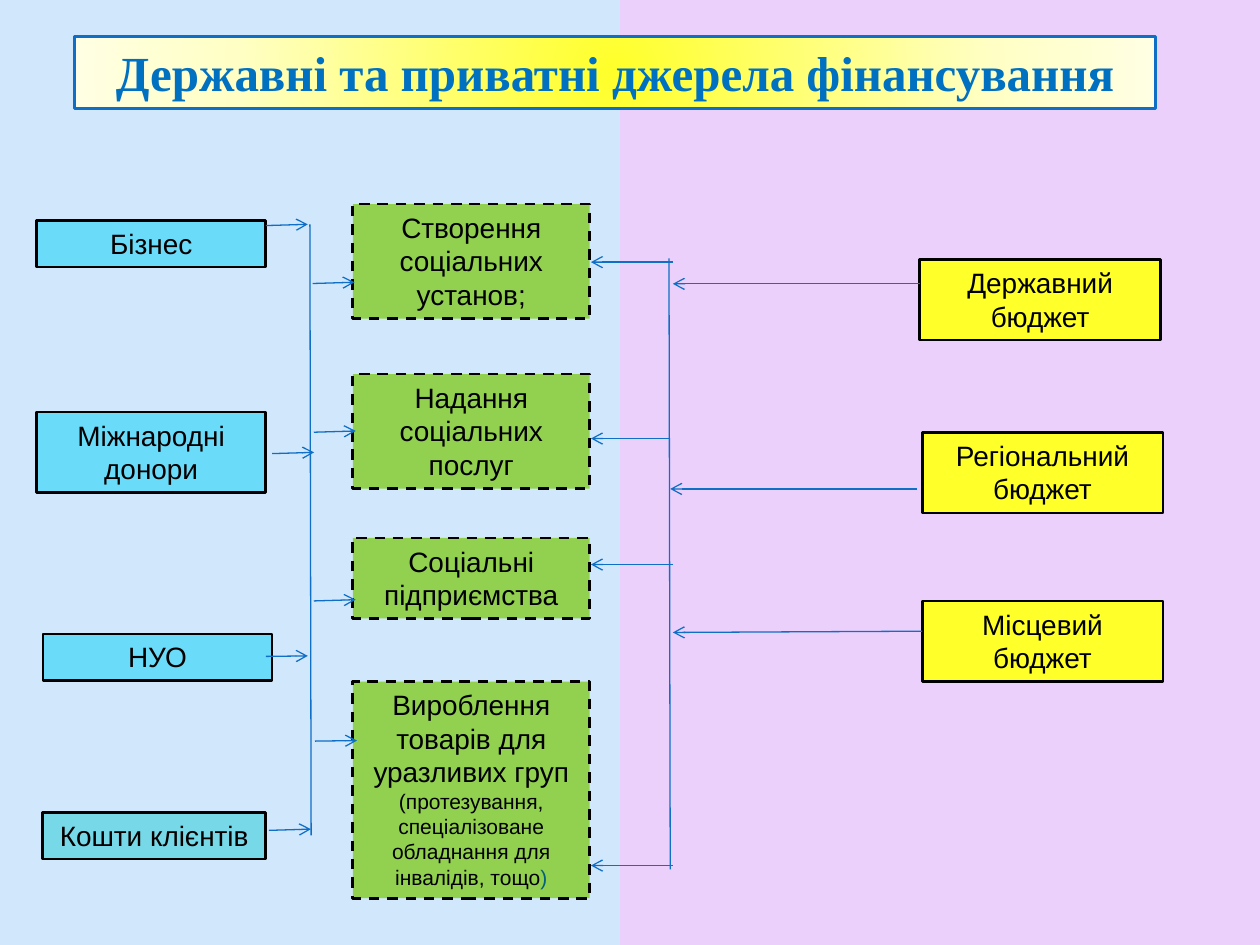
from lxml import etree
from pptx import Presentation
from pptx import util as u
from pptx.dml.color import RGBColor
from pptx.enum import dml, shapes, text
from pptx.oxml import ns, parse_xml

Pt = u.Pt
BLACK = RGBColor(0x00, 0x00, 0x00)
BLUE = RGBColor(0x0F, 0x6F, 0xC6)
TITLE = RGBColor(0x00, 0x70, 0xC0)
TEAL = RGBColor(0x04, 0x61, 0x7B)
LILAC = RGBColor(0xEB, 0xD0, 0xFC)
SKY = RGBColor(0xD1, 0xE7, 0xFB)
GREEN = RGBColor(0x92, 0xD0, 0x50)
YELLOW = RGBColor(0xFF, 0xFF, 0x29)
CYAN = RGBColor(0x6B, 0xDB, 0xFA)
AQUA = RGBColor(0x77, 0xD9, 0xE8)
GLOW = [(0, YELLOW), (70, RGBColor(0xFF, 0xFF, 0xC5)), (100, RGBColor(0xFF, 0xFF, 0xE3))]


class Diagram:
    """Holds the style and the current slide."""
    font, size = "Arial", 16
    border, thin = 1.5, 0.75

    def __init__(self, slide):
        self.s = slide

    def panel(self, x, y, w, h, fill):
        sp = self.s.shapes.add_shape(shapes.MSO_SHAPE.RECTANGLE, Pt(x), Pt(y), Pt(w), Pt(h))
        sp.shadow.inherit = False
        sp.fill.solid()
        sp.fill.fore_color.rgb = fill
        sp.line.fill.background()
        return sp

    def box(self, x, y, w, h, fill, *runs, line=BLACK, dash=False):
        """Each run is (text, size, colour)."""
        sp = self.panel(x, y, w, h, fill)
        sp.line.color.rgb = line
        sp.line.width = Pt(self.border)
        if dash:
            sp.line.dash_style = dml.MSO_LINE.DASH
        tf = sp.text_frame
        tf.word_wrap = True
        tf.auto_size = text.MSO_AUTO_SIZE.SHAPE_TO_FIT_TEXT
        tf.vertical_anchor = text.MSO_ANCHOR.TOP
        p = tf.paragraphs[0]
        p.alignment = text.PP_ALIGN.CENTER
        p.font.name = self.font
        for words, size, color in runs:
            r = p.add_run()
            r.text = words
            r.font.size = Pt(size)
            r.font.color.rgb = color
        return sp

    def label(self, x, y, w, h, fill, words, dash=False):
        return self.box(x, y, w, h, fill, (words, self.size, BLACK), dash=dash)

    def title(self, x, y, w, h, words):
        sp = self.box(x, y, w, h, YELLOW, (words, 28, TITLE), line=BLUE)
        font = sp.text_frame.paragraphs[0].font
        font.name, font.bold = "Times New Roman", True
        # Radial gradient from the centre
        stops = "".join(f'<a:gs pos="{pos * 1000}"><a:srgbClr val="{color}"/></a:gs>'
                        for pos, color in GLOW)
        grad = parse_xml(
            f'<a:gradFill {ns.nsdecls("a")} rotWithShape="1"><a:gsLst>{stops}</a:gsLst>'
            '<a:path path="circle"><a:fillToRect l="50000" t="50000" r="50000" b="50000"/>'
            '</a:path></a:gradFill>')
        props = sp._element.spPr
        props.replace(props.find(ns.qn("a:solidFill")), grad)

    def line(self, x1, y1, x2, y2, arrow=False):
        c = self.s.shapes.add_connector(
            shapes.MSO_CONNECTOR.STRAIGHT, Pt(x1), Pt(y1), Pt(x2), Pt(y2))
        c.line.color.rgb = BLUE
        c.line.width = Pt(self.thin)
        if arrow:
            etree.SubElement(c.line._get_or_add_ln(), ns.qn("a:tailEnd"), type="arrow")
        etree.SubElement(c._element.spPr, ns.qn("a:effectLst"))


def main():
    prs = Presentation()
    prs.slide_width, prs.slide_height = Pt(720), Pt(540)
    d = Diagram(prs.slides.add_slide(prs.slide_layouts[6]))

    # Background halves and title
    d.panel(354.2, 0, 365.8, 540, LILAC)
    d.panel(0, 0, 354.2, 540, SKY)
    d.title(42.5, 20.9, 617.8, 41, "Державні та приватні джерела фінансування")

    # Private sources
    for x, y, w, h, fill, words in [
            (20.9, 126, 131, 26.6, CYAN, "Бізнес"),
            (20.9, 235.4, 131, 46.1, CYAN, "Міжнародні донори"),
            (24.5, 362.2, 131, 26.6, CYAN, "НУО"),
            (24.5, 464.4, 127.4, 26.6, AQUA, "Кошти клієнтів")]:
        d.label(x, y, w, h, fill, words)

    # Uses of the funds
    mid_x, mid_w = 201.6, 135.4
    for y, h, words in [(116.6, 65.5, "Створення соціальних установ;"),
                        (213.8, 65.5, "Надання соціальних послуг"),
                        (307.4, 46.1, "Соціальні підприємства")]:
        d.label(mid_x, y, mid_w, h, GREEN, words, dash=True)
    d.box(mid_x, 389.5, mid_w, 123.8, GREEN,
          ("Вироблення товарів для уразливих груп ", 16, BLACK),
          ("(протезування, спеціалізоване обладнання для інвалідів, тощо", 12, BLACK),
          (")", 12, TEAL), dash=True)

    # Budgets
    for x, y, words in [(525.6, 148.3, "Державний бюджет"),
                        (527, 247, "Регіональний бюджет"),
                        (527, 343.4, "Місцевий бюджет")]:
        d.label(x, y, 137.5, 46.1, YELLOW, words)

    # Collecting lines
    d.line(177.1, 128.2, 177.8, 477.4)
    d.line(382.3, 147.6, 383, 496.8)

    # Private sources to the left line, then on to the uses
    for x, y, rise in [(151.9, 128.9, 0.7), (155.5, 259.2, 0.7),
                       (151.9, 375.1, 0.3), (153.7, 474.5, 0.7),
                       (178.6, 162, 0.7), (179.3, 247, 0.7),
                       (179.3, 343.4, 0.7), (180, 423.5, 0.3)]:
        d.line(x, y, x + 24, y - rise, arrow=True)

    # Budgets to the right line
    for x1, y1, x2, y2 in [(525.6, 162.2, 384.5, 162.2),
                           (524.2, 279.4, 383, 279.4),
                           (527, 360.7, 384.5, 361.4)]:
        d.line(x1, y1, x2, y2, arrow=True)

    # Right line to the uses
    for x, y in [(384.5, 149.8), (383, 250.6), (384.5, 322.6), (384.5, 494.6)]:
        d.line(x, y, 337.7, y, arrow=True)

    prs.save("out.pptx")


if __name__ == "__main__":
    main()
